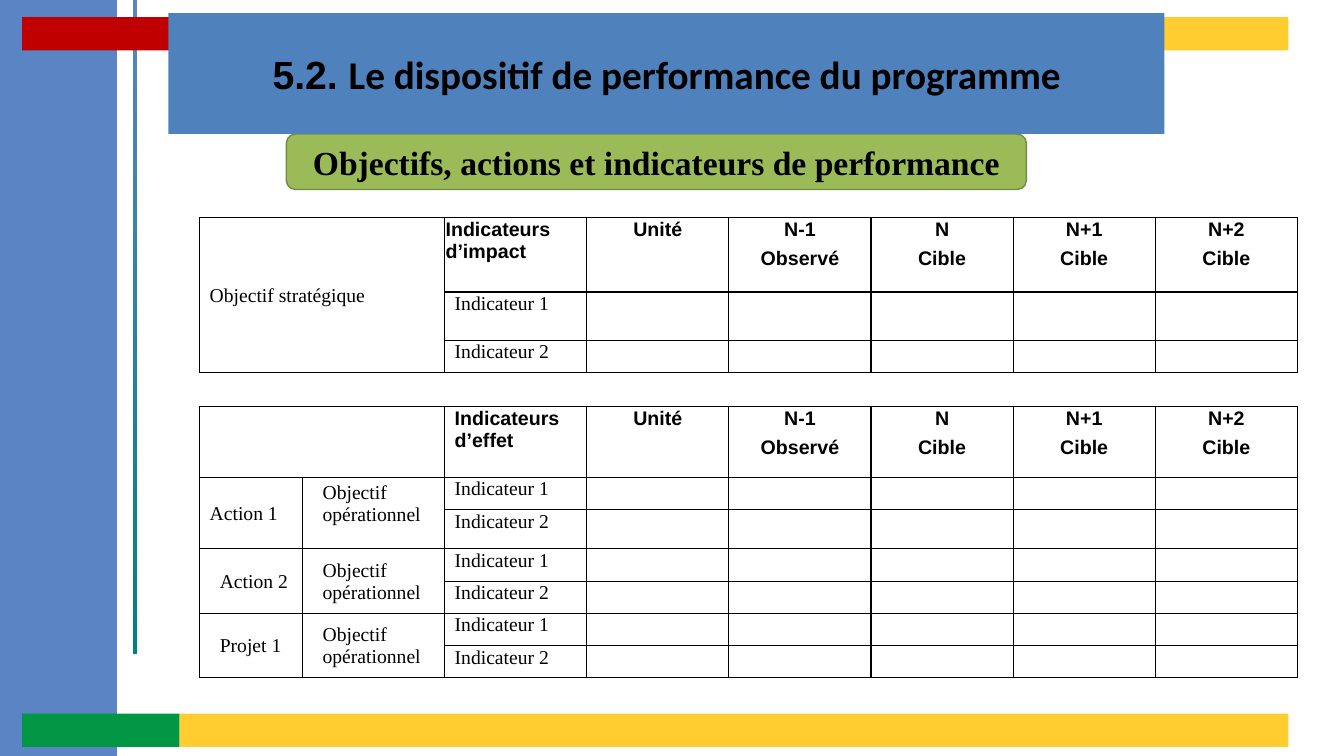
from lxml import etree
from pptx import Presentation
from pptx.dml.color import RGBColor
from pptx.enum.shapes import MSO_SHAPE as SHAPE
from pptx.enum.text import MSO_ANCHOR as ANCHOR, PP_ALIGN as ALIGN
from pptx.oxml.ns import qn
from pptx.util import Inches, Pt

BLACK = RGBColor(0x00, 0x00, 0x00)
SKY = RGBColor(0x5A, 0x84, 0xC3)
TEAL = RGBColor(0x00, 0x80, 0x80)
GOLD = RGBColor(0xFF, 0xCD, 0x2F)
GREEN = RGBColor(0x00, 0x96, 0x44)
RED = RGBColor(0xC0, 0x00, 0x00)
BLUE = RGBColor(0x4F, 0x81, 0xBD)
LIME = RGBColor(0x9B, 0xBB, 0x59)
OLIVE = RGBColor(0x73, 0x8A, 0x42)
SERIF, SANS = "Times New Roman", "Arial"

# Content
TITLE = [("5.2. ", SANS), ("Le dispositif de performance du programme", "Calibri")]
BANNER = [("Objectifs, actions et indicateurs de performance", SERIF)]
BANDS = [  # left, top, width, height, colour
    (0, 0, 1.16, 7.5, SKY),
    (1.32, 0, 0.04, 6.49, TEAL),
    (1.78, 7.08, 11, 0.33, GOLD),
    (0.22, 7.08, 1.56, 0.33, GREEN),
    (0.22, 0.17, 9.56, 0.33, RED),
    (9.78, 0.17, 3, 0.33, GOLD),
]
YEARS = [("N-1", "Observé"), ("N", "Cible"), ("N+1", "Cible"), ("N+2", "Cible")]
HEADS = [(0, "Indicateurs d’impact", 0.01), (5, "Indicateurs d’effet", 0.1)]
GOAL = "Objectif opérationnel"
ACTS = [  # row, name, left inset, bottom inset of the goal
    (7, "Action 1", 0.1, 0.2),
    (9, "Action 2", 0.2, 0),
    (11, "Projet 1", 0.2, 0),
]
MARKS = [2, 3, 7, 8, 9, 10, 11, 12]
GAP = 4
COLS = [1.02] + [1.41] * 7
ROWS = [0.29, 0.44, 0.48, 0.32, 0.34, 0.29, 0.41, 0.32, 0.39] + [0.32] * 4


def write(frame, runs, size=14, bold=False, align=ALIGN.LEFT, anchor=ANCHOR.TOP):
    frame.word_wrap = True
    frame.vertical_anchor = anchor
    para = frame.paragraphs[0]
    para.alignment = align
    for words, face in runs:
        run = para.add_run()
        run.text = words
        font = run.font
        font.name, font.size, font.bold = face, Pt(size), bold
        font.color.rgb = BLACK


def block(left, top, width, height, fill, kind=SHAPE.RECTANGLE):
    shape = slide.shapes.add_shape(
        kind, Inches(left), Inches(top), Inches(width), Inches(height))
    shape.shadow.inherit = False
    shape.fill.solid()
    shape.fill.fore_color.rgb = fill
    shape.line.fill.background()
    return shape


def edge(cell, bare):
    """Draw black cell borders, except on the bare sides."""
    props = cell._tc.get_or_add_tcPr()
    for spot, side in enumerate("LRTB"):
        line = etree.Element(qn("a:ln" + side), w=str(Pt(1)))
        if side in bare:
            etree.SubElement(line, qn("a:noFill"))
        else:
            fill = etree.SubElement(line, qn("a:solidFill"))
            etree.SubElement(fill, qn("a:srgbClr"), val=str(BLACK))
        props.insert(spot, line)


def fill_in(row, col, words, face=SERIF, left=0.1, low=0, span=None, **form):
    cell = grid.cell(row, col)
    if span:
        cell.merge(grid.cell(row + span[0] - 1, col + span[1] - 1))
    cell.margin_left, cell.margin_bottom = Inches(left), Inches(low)
    if "anchor" in form:
        cell.vertical_anchor = form["anchor"]
    write(cell.text_frame, [(words, face)], **form)


deck = Presentation()
deck.slide_width, deck.slide_height = Inches(13.33), Inches(7.5)
slide = deck.slides.add_slide(deck.slide_layouts[6])

# Coloured bands
for *box, tint in BANDS:
    band = block(*box, tint)
    if tint == TEAL:
        band.fill.gradient()
        band.fill.gradient_angle = 90
        for stop, shade in zip(band.fill.gradient_stops, (TEAL, SKY)):
            stop.color.rgb = shade

# Banner
banner = block(2.84, 1.33, 7.34, 0.55, LIME, SHAPE.ROUNDED_RECTANGLE)
banner.line.color.rgb = OLIVE
banner.line.width = Pt(1)
write(banner.text_frame, BANNER, size=24, bold=True,
      align=ALIGN.CENTER, anchor=ANCHOR.MIDDLE)

# Table frame
grid = slide.shapes.add_table(
    len(ROWS), len(COLS), Inches(1.98), Inches(2.16),
    Inches(sum(COLS)), Inches(sum(ROWS))).table
grid.first_row = grid.horz_banding = False
for col, width in zip(grid.columns, COLS):
    col.width = Inches(width)
tops = [head[0] for head in HEADS]
for r, height in enumerate(ROWS):
    grid.rows[r].height = Inches(height)
    for c in range(len(COLS)):
        cell = grid.cell(r, c)
        cell.margin_left = cell.margin_right = cell.margin_top = Inches(0.01)
        cell.margin_bottom = 0
        cell.fill.background()
        bare = "LR" if r == GAP else ""
        if c >= 4:
            bare += "B" if r in tops else "T" if r - 1 in tops else ""
        edge(cell, bare)
        para = cell.text_frame.paragraphs[0]
        etree.SubElement(para._p, qn("a:endParaRPr"), sz="1400")

# Table text
for top, name, left in HEADS:
    fill_in(top, 2, name, SANS, left, span=(2, 1), bold=True)
    fill_in(top, 3, "Unité", SANS, 0.01, span=(2, 1), bold=True, align=ALIGN.CENTER)
    for c, year in enumerate(YEARS, 4):
        for r, words in enumerate(year, top):
            fill_in(r, c, words, SANS, 0.01, bold=True, align=ALIGN.CENTER)
fill_in(0, 0, "Objectif stratégique", span=(4, 2), anchor=ANCHOR.MIDDLE)
grid.cell(GAP, 0).merge(grid.cell(GAP, 1))
grid.cell(5, 0).merge(grid.cell(6, 1))
for r, name, left, low in ACTS:
    fill_in(r, 0, name, left=left, span=(2, 1), anchor=ANCHOR.MIDDLE)
    fill_in(r, 1, GOAL, left=0.2, low=low, span=(2, 1), anchor=ANCHOR.MIDDLE)
for i, r in enumerate(MARKS):
    fill_in(r, 2, f"Indicateur {i % 2 + 1}")

# Title
title = block(1.67, 0.13, 9.88, 1.2, BLUE)
write(title.text_frame, TITLE, size=28, bold=True,
      align=ALIGN.CENTER, anchor=ANCHOR.MIDDLE)

deck.save("out.pptx")
